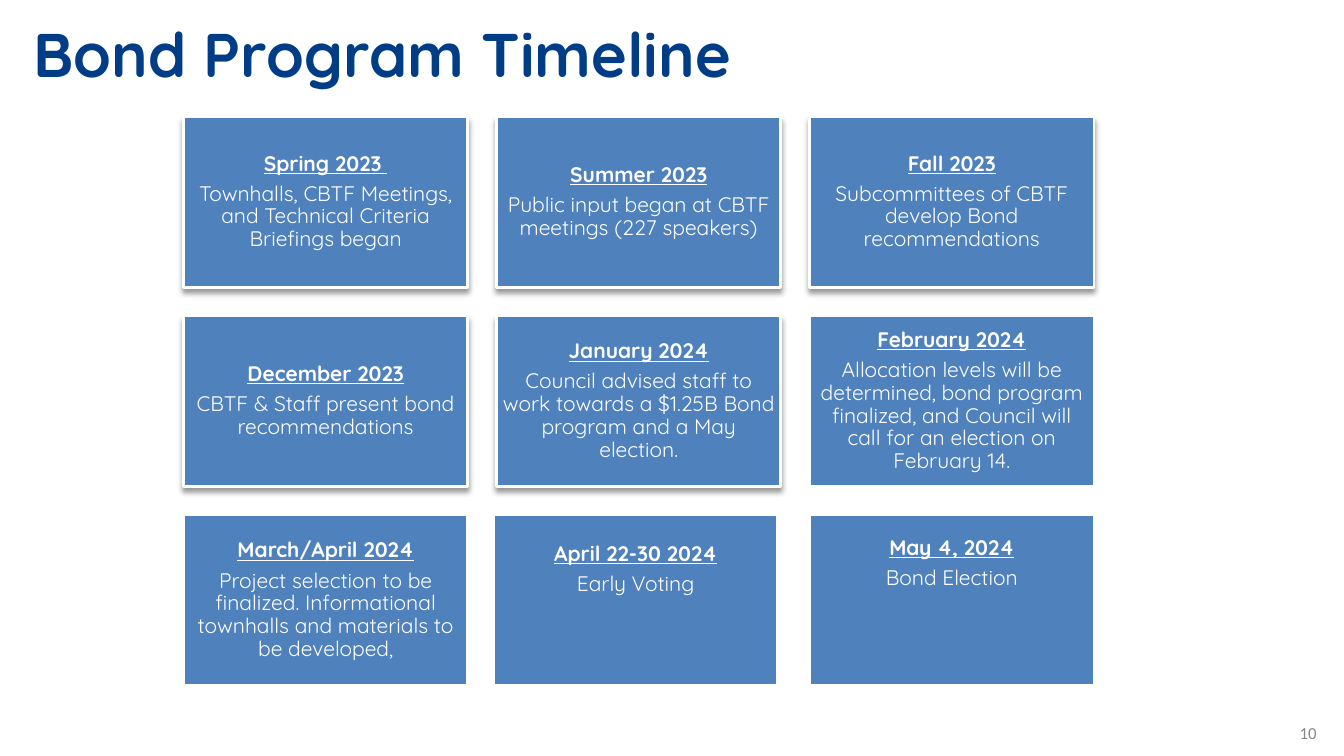
import pptx
import pptx.dml.color
import pptx.enum.shapes
import pptx.enum.text
import pptx.oxml
import pptx.oxml.ns
import pptx.util

Inches = pptx.util.Inches
Pt = pptx.util.Pt
RGBColor = pptx.dml.color.RGBColor
ALIGN = pptx.enum.text.PP_ALIGN
ANCHOR = pptx.enum.text.MSO_ANCHOR

NAVY = RGBColor(0x00, 0x3D, 0x86)
BLUE = RGBColor(0x4F, 0x81, 0xBD)
WHITE = RGBColor(0xFF, 0xFF, 0xFF)
GRAY = RGBColor(0x87, 0x87, 0x87)

TITLE = {"name": "Quicksand", "size": Pt(44), "bold": True}
DATE = {"name": "Quicksand", "size": Pt(15), "bold": True, "underline": True}
EVENT = {"name": "Quicksand", "size": Pt(15), "bold": False, "underline": False}
NUMBER = {"name": "Calibri", "size": Pt(12)}

CARD_W, CARD_H = 2.82, 1.69
STEP_X, STEP_Y = 3.105, 1.975

# Each stage: date, event, shadow, top inset (None centres the text), shift in x
STAGES = [
    ("Spring 2023 ", "Townhalls, CBTF Meetings, and Technical Criteria Briefings began",
     True, None, 0),
    ("Summer 2023", "Public input began at CBTF meetings (227 speakers)", True, None, 0),
    ("Fall 2023", "Subcommittees of CBTF develop Bond recommendations", True, None, 0),
    ("December 2023", "CBTF & Staff present bond recommendations", True, None, 0),
    ("January 2024", "Council advised staff to work towards a $1.25B Bond program "
     "and a May election.", True, None, 0),
    ("February 2024", "Allocation levels will be determined, bond program finalized, "
     "and Council will call for an election on February 14.", False, None, 0),
    ("March/April 2024", "Project selection to be finalized. Informational townhalls "
     "and materials to be developed,", False, None, 0),
    ("April 22-30 2024", "Early Voting", False, 0.28, -0.03),
    ("May 4, 2024", "Bond Election", False, 0.22, 0),
]

SHADOW = (
    '<a:effectLst %s><a:outerShdw blurRad="50800" dist="38100" dir="5400000" '
    'rotWithShape="0"><a:srgbClr val="000000"><a:alpha val="40000"/></a:srgbClr>'
    '</a:outerShdw></a:effectLst>' % pptx.oxml.ns.nsdecls("a")
)


def set_font(para, look, color):
    for key, value in look.items():
        setattr(para.font, key, value)
    para.font.color.rgb = color


def set_frame(frame, inset, anchor):
    frame.word_wrap = True
    frame.auto_size = pptx.enum.text.MSO_AUTO_SIZE.NONE
    frame.vertical_anchor = anchor
    for side in ("left", "top", "right", "bottom"):
        setattr(frame, "margin_" + side, Inches(inset))


def cast_shadow(shape):
    """Swap the empty effect list for a soft shadow below the shape."""
    props = shape._element.spPr
    props.remove(props.find(pptx.oxml.ns.qn("a:effectLst")))
    props.append(pptx.oxml.parse_xml(SHADOW))


def add_title(slide, left, top, width, height):
    title = slide.shapes.title
    title.left, title.top = Inches(left), Inches(top)
    title.width, title.height = Inches(width), Inches(height)
    set_frame(title.text_frame, 0, ANCHOR.TOP)
    title.text_frame.margin_left = Inches(0.01)
    title.text_frame.text = "Bond Program Timeline"
    para = title.text_frame.paragraphs[0]
    para.alignment = ALIGN.LEFT
    set_font(para, TITLE, NAVY)


def add_card(slide, left, top, stage):
    date, event, shadow, inset, shift = stage
    card = slide.shapes.add_shape(
        pptx.enum.shapes.MSO_SHAPE.RECTANGLE,
        Inches(left + shift), Inches(top), Inches(CARD_W), Inches(CARD_H))
    card.shadow.inherit = False
    card.fill.solid()
    card.fill.fore_color.rgb = BLUE
    card.line.color.rgb = WHITE
    card.line.width = Pt(2)
    if shadow:
        cast_shadow(card)
    frame = card.text_frame
    set_frame(frame, 0.06, ANCHOR.MIDDLE if inset is None else ANCHOR.TOP)
    if inset is not None:
        frame.margin_top = Inches(inset)
    frame.text = date + "\n" + event
    for para, look in zip(frame.paragraphs, (DATE, EVENT)):
        para.alignment = ALIGN.CENTER
        para.line_spacing = 0.9
        para.space_after = Pt(5.25)
        set_font(para, look, WHITE)


def add_grid(slide, left, top):
    for index, stage in enumerate(STAGES):
        row, col = divmod(index, 3)
        add_card(slide, left + col * STEP_X, top + row * STEP_Y, stage)


def add_number(slide, left, top, width, height):
    box = slide.shapes.add_textbox(
        Inches(left), Inches(top), Inches(width), Inches(height))
    set_frame(box.text_frame, 0, ANCHOR.TOP)
    box.text_frame.margin_left = Inches(0.04)
    box.text_frame.text = "10"
    para = box.text_frame.paragraphs[0]
    para.line_spacing = Pt(12.4)
    set_font(para, NUMBER, GRAY)


def main():
    deck = pptx.Presentation()
    deck.slide_width, deck.slide_height = Inches(13.33), Inches(7.5)
    slide = deck.slides.add_slide(deck.slide_layouts.get_by_name("Title Only"))
    add_title(slide, 0.32, 0.16, 11.43, 0.76)
    add_grid(slide, 1.82, 1.16)
    add_number(slide, 12.85, 7.2, 0.26, 0.19)
    deck.save("out.pptx")


if __name__ == "__main__":
    main()
